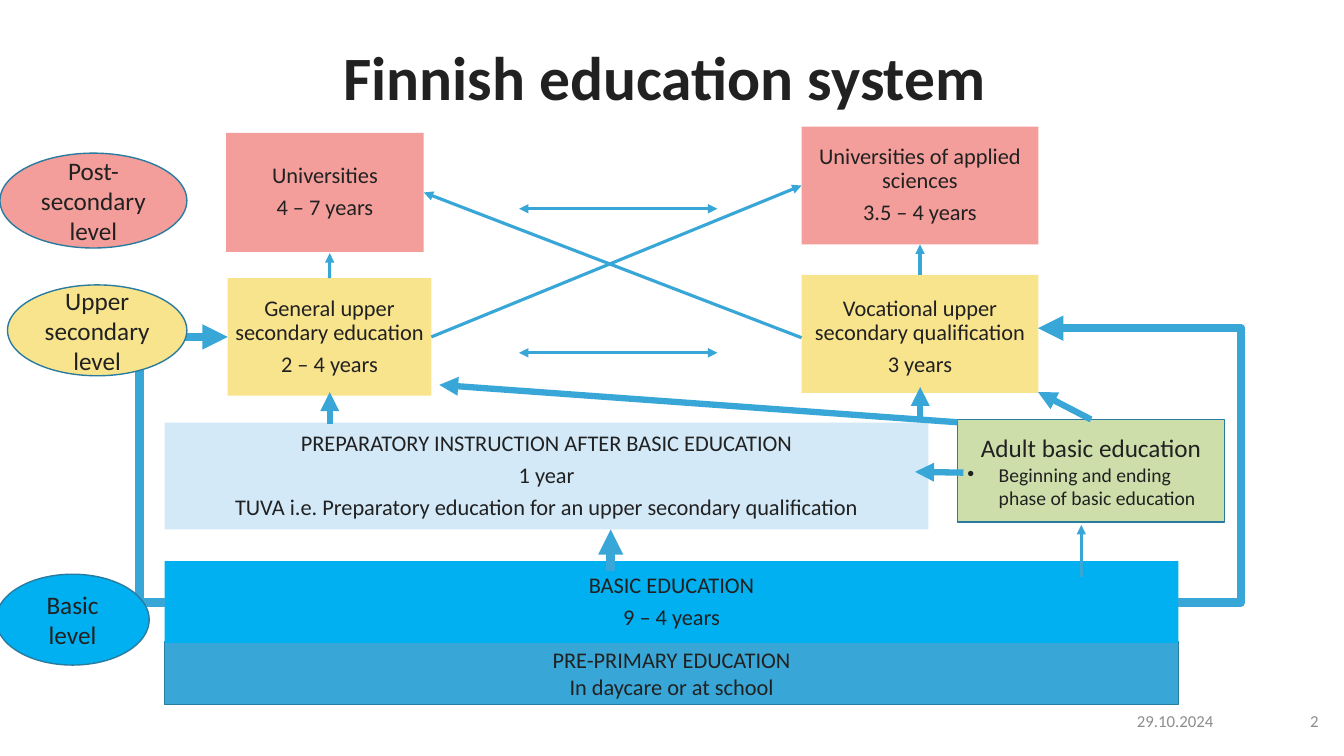
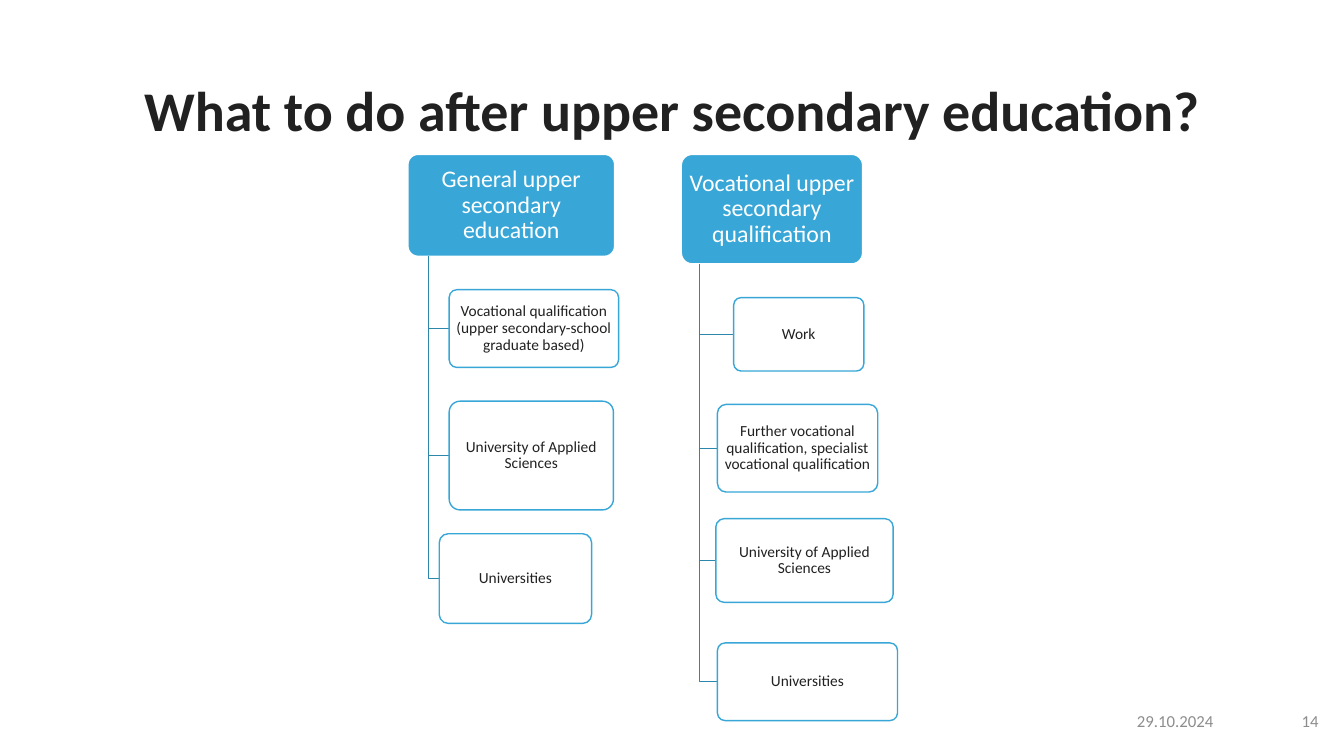
from collections import namedtuple

from pptx import Presentation
from pptx.dml.color import RGBColor
from pptx.enum.shapes import MSO_CONNECTOR, MSO_SHAPE
from pptx.enum.text import MSO_ANCHOR, PP_ALIGN
from pptx.oxml.ns import qn
from pptx.oxml.xmlchemy import OxmlElement
from pptx.util import Cm, Pt

# Shared style
FONT = "Calibri"
INK = RGBColor(0x21, 0x21, 0x21)
GREY = RGBColor(0x8D, 0x8D, 0x8D)
WHITE = RGBColor(0xFF, 0xFF, 0xFF)
BLUE = RGBColor(0x38, 0xA7, 0xD7)
OUTLINE = RGBColor(0x29, 0x7C, 0x9F)
TREE_LINE = RGBColor(0x2D, 0x86, 0xAC)
BRIGHT = RGBColor(0x00, 0xB0, 0xF0)
PALE = RGBColor(0xD3, 0xE9, 0xF7)
YELLOW = RGBColor(0xF8, 0xE4, 0x8C)
PINK = RGBColor(0xF3, 0x9E, 0x9B)
GREEN = RGBColor(0xCD, 0xDE, 0xAA)

DATE = "29.10.2024"
THIN, MEDIUM, THICK = 2.25, 4.5, 6
ONE_HEAD, TWO_HEADS = ("a:tailEnd",), ("a:headEnd", "a:tailEnd")
TOP, LEFT, BOTTOM, RIGHT = range(4)
Site = namedtuple("Site", "shape side")


# Text
def write(sp, text, size, color=INK, align=PP_ALIGN.CENTER, bold=False,
          spacing=1.0, after=0, insets=(0.25, 0.13, 0.25, 0.13)):
    tf = sp.text_frame
    tf.word_wrap = True
    tf.vertical_anchor = MSO_ANCHOR.MIDDLE
    tf.margin_left, tf.margin_top, tf.margin_right, tf.margin_bottom = map(Cm, insets)
    tf.text = text
    for p in tf.paragraphs:
        p.alignment = align
        p.line_spacing = spacing
        p.space_after = Pt(after)
        for r in p.runs:
            r.font.name = FONT
            r.font.size = Pt(size)
            r.font.bold = bold
            r.font.color.rgb = color


def make_bullet(p, indent):
    pPr = p._p.get_or_add_pPr()
    pPr.set("marL", str(Cm(indent)))
    pPr.set("indent", str(-Cm(indent)))
    for tag, key, value in (("a:buFont", "typeface", "Arial"), ("a:buChar", "char", "•")):
        bullet = OxmlElement(tag)
        bullet.set(key, value)
        pPr.append(bullet)


def add_label(s, at, text, size, **style):
    write(s.shapes.add_textbox(*map(Cm, at)), text, size, **style)


# Shapes
def add_box(s, at, fill, line=None, kind=MSO_SHAPE.RECTANGLE):
    sp = s.shapes.add_shape(kind, *map(Cm, at))
    sp.shadow.inherit = False
    sp.fill.solid()
    sp.fill.fore_color.rgb = fill
    if line is None:
        sp.line.fill.background()
    else:
        sp.line.color.rgb = line
        sp.line.width = Pt(1)
    return sp


def add_stage(s, at, fill, text, top_inset=0.18):
    sp = add_box(s, at, fill)
    write(sp, text, 16, spacing=0.9, after=5.6, insets=(0.18, top_inset, 0.18, 0.18))
    return sp


def add_level(s, at, fill, text):
    write(add_box(s, at, fill, OUTLINE, MSO_SHAPE.OVAL), text, 18)


def add_node(s, at, fill, line, text, size, color, inset):
    sp = add_box(s, at, fill, line, MSO_SHAPE.ROUNDED_RECTANGLE)
    sp.adjustments[0] = 0.1
    write(sp, text, size, color, spacing=0.9, insets=(inset, 0.05, inset, 0.05))


# Lines
def style_line(sp, width, color, heads):
    sp.line.color.rgb = color
    sp.line.width = Pt(width)
    ln = sp._element.spPr.find(qn("a:ln"))
    for tag in heads:
        head = OxmlElement(tag)
        head.set("type", "triangle")
        ln.append(head)


def add_arrow(s, begin, end, width, heads=ONE_HEAD):
    """Draw a straight arrow; each end is a point in cm or a Site on a shape."""
    points = [(0, 0) if isinstance(e, Site) else e for e in (begin, end)]
    sp = s.shapes.add_connector(MSO_CONNECTOR.STRAIGHT,
                                *(Cm(v) for point in points for v in point))
    if isinstance(begin, Site):
        sp.begin_connect(*begin)
    if isinstance(end, Site):
        sp.end_connect(*end)
    style_line(sp, width, BLUE, heads)
    sp._element.spPr.append(OxmlElement("a:effectLst"))


def add_bent_line(s, points, width, color, heads=()):
    start, *rest = [(Cm(x), Cm(y)) for x, y in points]
    builder = s.shapes.build_freeform(*start)
    builder.add_line_segments(rest, close=False)
    sp = builder.convert_to_shape()
    sp.fill.background()
    style_line(sp, width, color, heads)
    sp.shadow.inherit = False


# Slides
def add_slide(prs, title, size, title_height, number):
    s = prs.slides.add_slide(prs.slide_layouts[6])
    add_label(s, (2.33, 1.02, 29.21, title_height), title, size, bold=True, spacing=0.9)
    for left, width, text in ((31.12, 2.36, number), (27.78, 3.05, DATE)):
        add_label(s, (left, 17.65, width, 1.02), text, 12, color=GREY, align=PP_ALIGN.RIGHT)
    return s


def build_system(prs):
    s = add_slide(prs, "Finnish education system ", 44, 2.03, "2")

    # Stages of education
    write(add_box(s, (4.15, 16.18, 25.55, 1.57), BLUE, OUTLINE),
          "PRE-PRIMARY EDUCATION\nIn daycare or at school", 16)
    add_stage(s, (4.15, 14.14, 25.55, 2.06), BRIGHT, "BASIC EDUCATION\n9 – 4 years")
    add_stage(s, (4.15, 10.65, 19.25, 2.69), PALE,
              "PREPARATORY INSTRUCTION AFTER BASIC EDUCATION\n1 year\n"
              "TUVA i.e. Preparatory education for an upper secondary qualification")
    general = add_stage(s, (5.74, 7.01, 5.13, 2.96), YELLOW,
                        "General upper secondary education\n2 – 4 years")
    vocational = add_stage(s, (20.2, 6.93, 5.97, 2.97), YELLOW,
                           "Vocational upper secondary qualification\n3 years",
                           top_inset=0.36)
    universities = add_stage(s, (5.7, 3.35, 4.98, 3), PINK, "Universities\n4 – 7 years")
    applied = add_stage(s, (20.2, 3.19, 5.97, 2.97), PINK,
                        "Universities of applied sciences\n3.5 – 4 years")

    # Routes from basic education
    for route in (
        [(29.7, 15.18), (31.28, 15.18), (31.28, 8.27), (26.16, 8.27)],
        [(4.15, 15.18), (3.52, 15.18), (3.52, 8.49), (5.74, 8.49)],
    ):
        add_bent_line(s, route, THICK, BLUE, ONE_HEAD)

    # Level ovals
    add_level(s, (0, 3.86, 4.71, 2.39), PINK, "Post-secondary level")
    add_level(s, (0.19, 7.18, 4.52, 2.29), YELLOW, "Upper secondary level")
    add_level(s, (-0.1, 14.47, 3.86, 2.29), BRIGHT, "Basic level")

    # Adult basic education
    adult = add_box(s, (24.13, 10.57, 6.73, 2.59), GREEN, OUTLINE)
    write(adult, "Adult basic education\nBeginning and ending phase of basic education", 18)
    p = adult.text_frame.paragraphs[1]
    p.alignment = PP_ALIGN.LEFT
    make_bullet(p, 0.79)
    p.runs[0].font.size = Pt(14)

    # Straight routes
    for begin, end, width in (
        ((8.31, 10.69), (8.31, 9.88), MEDIUM),
        (Site(general, TOP), (8.31, 6.38), THIN),
        (Site(vocational, TOP), Site(applied, BOTTOM), THIN),
        (Site(general, RIGHT), Site(applied, LEFT), THIN),
        ((20.2, 8.51), Site(universities, RIGHT), THIN),
        ((23.19, 10.64), (23.19, 9.75), MEDIUM),
        ((27.25, 14.55), (27.25, 13.23), THIN),
        ((15.39, 14.38), (15.39, 13.34), THICK),
        ((24.28, 11.91), (23.06, 11.89), MEDIUM),
        (Site(adult, TOP), (26.16, 9.88), MEDIUM),
        ((24.13, 10.64), (11.07, 9.7), MEDIUM),
    ):
        add_arrow(s, begin, end, width)
    for y in (5.26, 8.89):
        add_arrow(s, (13.08, y), (18.08, y), THIN, TWO_HEADS)


def add_tree(s, parent_at, parent_text, trunk_x, children):
    add_node(s, parent_at, BLUE, WHITE, parent_text, 17, WHITE, 0.1)
    bottom = parent_at[1] + parent_at[3]
    for at, text in children:
        left, top, _, height = at
        middle = top + height / 2
        add_bent_line(s, [(trunk_x, bottom), (trunk_x, middle), (left, middle)],
                      1, TREE_LINE)
        add_node(s, at, WHITE, BLUE, text, 11, INK, 0.05)


def build_next_steps(prs):
    s = add_slide(prs, "What to do after upper secondary education?", 40, 3.68, "14")
    add_tree(s, (10.28, 3.89, 5.21, 2.57), "General upper secondary education", 10.8, [
        ((11.32, 7.3, 4.27, 1.96),
         "Vocational qualification (upper secondary-school graduate based)"),
        ((11.32, 10.11, 4.14, 2.74), "University of Applied Sciences"),
        ((11.07, 13.45, 3.84, 2.26), "Universities"),
    ])
    add_tree(s, (17.17, 3.89, 4.57, 2.76), "Vocational upper secondary qualification", 17.63, [
        ((18.49, 7.5, 3.28, 1.85), "Work"),
        ((18.08, 10.19, 4.04, 2.21),
         "Further vocational qualification, specialist vocational qualification"),
        ((18.04, 13.07, 4.47, 2.11), "University of Applied Sciences"),
        ((18.08, 16.2, 4.54, 1.96), "Universities"),
    ])


def main():
    prs = Presentation()
    prs.slide_width, prs.slide_height = Cm(33.87), Cm(19.05)
    build_system(prs)
    build_next_steps(prs)
    prs.save("out.pptx")


if __name__ == "__main__":
    main()
